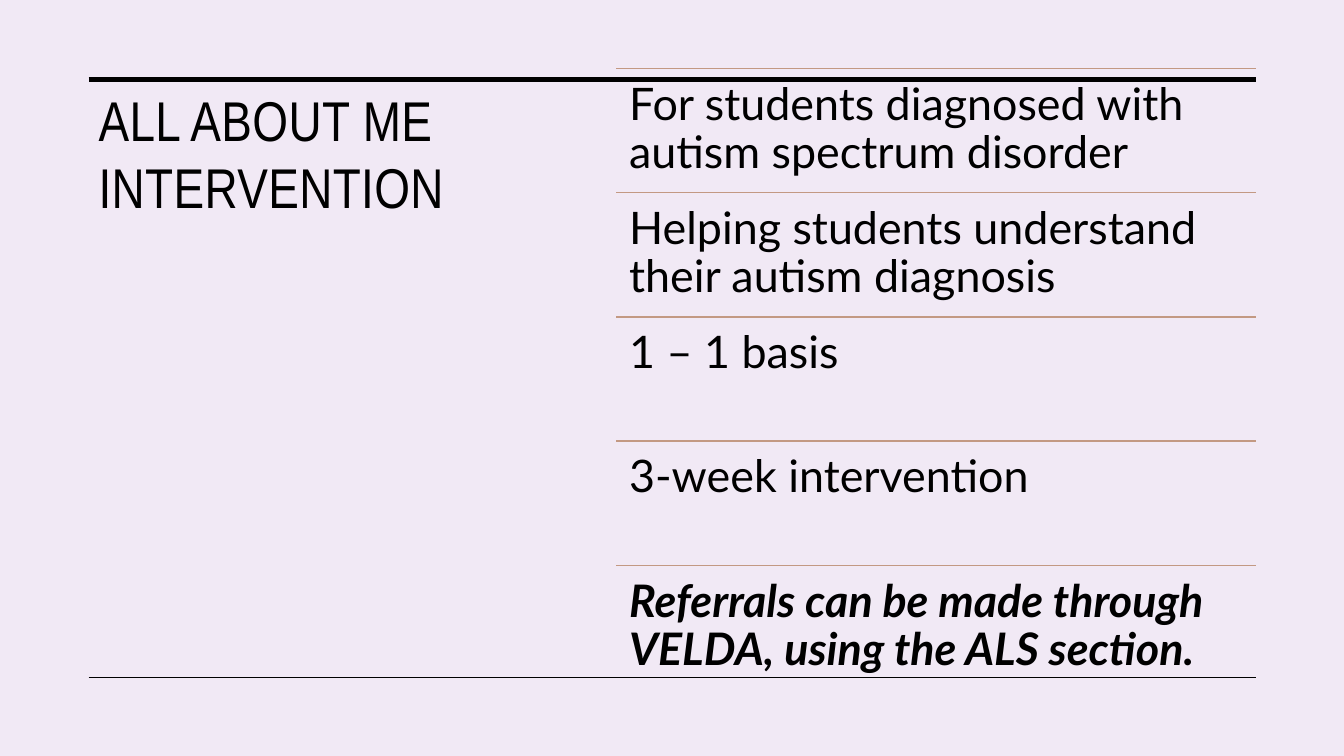
from lxml import etree
from pptx import Presentation
from pptx import util as u
from pptx.dml import color
from pptx.enum import shapes, text
from pptx.oxml import ns


def rgb(hex_code):
    return color.RGBColor.from_string(hex_code)


def write(frame, words, size, font, ink="000000", bold=False, italic=False,
          line_spacing=None, tracking=None):
    paragraph = frame.paragraphs[0]
    paragraph.alignment = text.PP_ALIGN.LEFT
    if line_spacing:
        paragraph.line_spacing = line_spacing
    run = paragraph.add_run()
    run.text = words
    run.font.size = u.Pt(size)
    run.font.name = font
    run.font.color.rgb = rgb(ink)
    run.font.bold = bold
    run.font.italic = italic
    if tracking:
        run._r.get_or_add_rPr().set("spc", str(tracking))


class InterventionSlide:
    background = "F1E9F5"
    ink = "000000"
    divider = "C39983"
    heading_font = "Arial Narrow"
    body_font = "Lato"
    left, right = 0.88, 12.46

    def __init__(self, deck):
        self.slide = deck.slides.add_slide(deck.slide_layouts[6])
        fill = self.slide.background.fill
        fill.solid()
        fill.fore_color.rgb = rgb(self.background)

    def rule(self, start, top, ink, weight):
        line = self.slide.shapes.add_connector(
            shapes.MSO_CONNECTOR.STRAIGHT, u.Inches(start), u.Inches(top),
            u.Inches(self.right), u.Inches(top))
        line.line.color.rgb = rgb(ink)
        line.line.width = u.Pt(weight)
        etree.SubElement(line._element.spPr, ns.qn("a:effectLst"))

    def text_box(self, left, top, width, height, words, inset=None, **style):
        box = self.slide.shapes.add_textbox(
            u.Inches(left), u.Inches(top), u.Inches(width), u.Inches(height))
        frame = box.text_frame
        frame.word_wrap = True
        frame.vertical_anchor = text.MSO_ANCHOR.TOP
        if inset:
            frame.margin_left = frame.margin_right = u.Inches(inset)
            frame.margin_top = frame.margin_bottom = u.Inches(inset)
        write(frame, words, ink=self.ink, **style)

    def heading(self, words):
        self.text_box(self.left, 0.8, 3.78, 5.75, words, size=40,
                      font=self.heading_font, tracking=30)

    def fact(self, left, top, height, words, emphasis):
        self.rule(left, top, self.divider, 1)
        self.text_box(left, top, self.right - left, height, words, inset=0.13,
                      size=32, font=self.body_font, line_spacing=0.9,
                      bold=emphasis, italic=emphasis)


def main():
    deck = Presentation()
    deck.slide_width, deck.slide_height = u.Inches(13.33), u.Inches(7.5)
    page = InterventionSlide(deck)
    page.rule(page.left, 0.79, page.ink, 3.5)
    page.rule(page.left, 6.72, page.ink, 1)
    page.heading("ALL ABOUT ME INTERVENTION")

    facts = [
        "For students diagnosed with autism spectrum disorder",
        "Helping students understand their autism diagnosis",
        "1 – 1 basis",
        "3-week intervention",
        "Referrals can be made through VELDA, using the ALS section.",
    ]
    facts_left, facts_top, facts_height = 6.11, 0.68, 6.16
    row_height = facts_height / len(facts)
    for row, fact in enumerate(facts):
        page.fact(facts_left, facts_top + row * row_height, row_height, fact,
                  emphasis=row == len(facts) - 1)
    deck.save("out.pptx")


if __name__ == "__main__":
    main()
